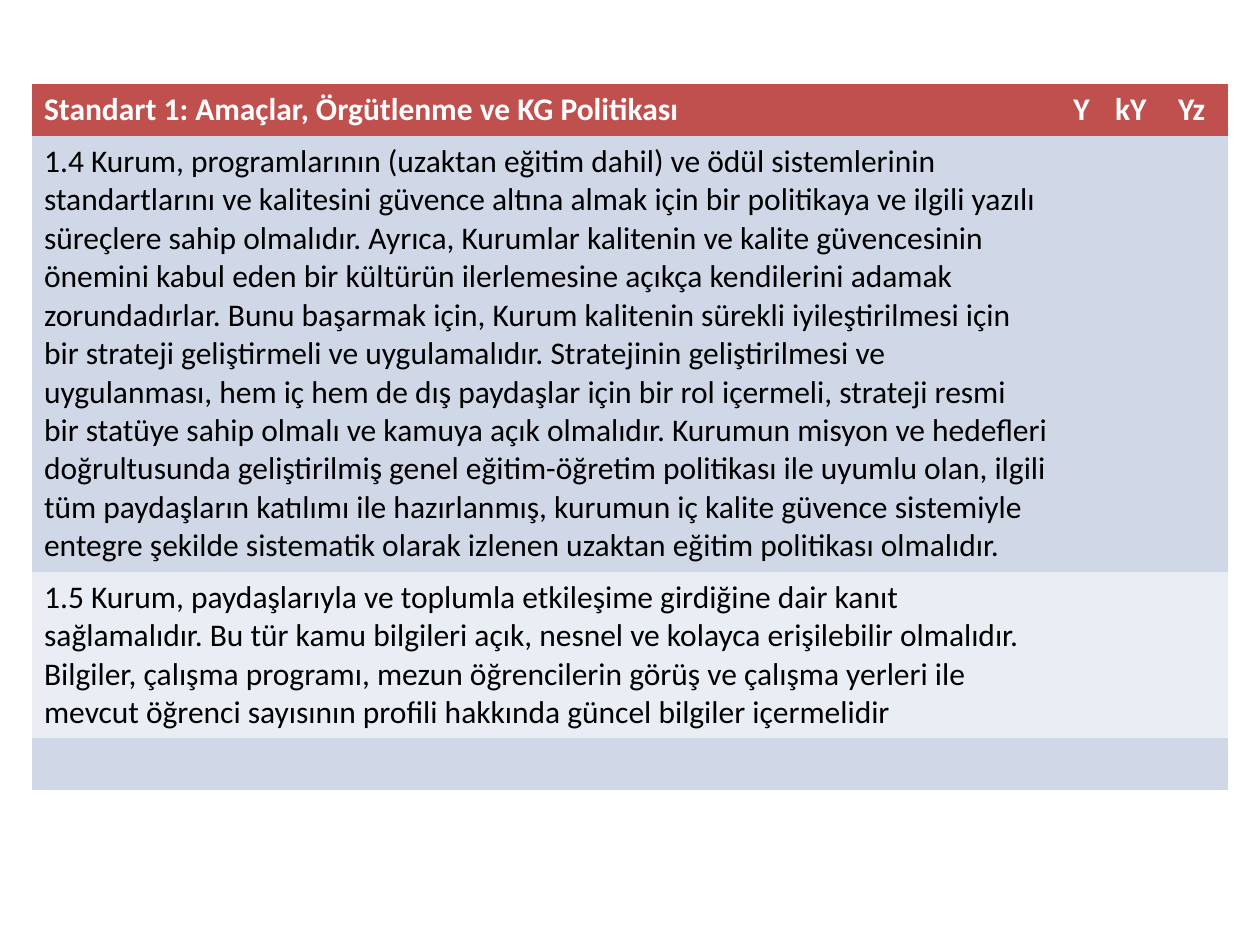
"""Build a slide with the Standard 1 assessment table."""
from pptx import Presentation
from pptx.dml.color import RGBColor
from pptx.util import Inches, Pt

RED = RGBColor(0xC0, 0x50, 0x4D)
BLUE = RGBColor(0xD0, 0xD8, 0xE8)
PALE = RGBColor(0xE9, 0xED, 0xF4)
WHITE = RGBColor(0xFF, 0xFF, 0xFF)
BLACK = RGBColor(0x00, 0x00, 0x00)
NO_STYLE = "{2D5ABB26-0587-4C30-8999-92F81FD0307C}"

COLS = [8.17, 0.33, 0.5, 0.5]
ROWS = [0.41, 3.46, 1.32, 0.41]
FILLS = [RED, BLUE, PALE, BLUE]
POLICY = [
    "1.4 Kurum, programlarının (uzaktan eğitim dahil) ve ödül sistemlerinin "
    "standartlarını ve kalitesini güvence altına almak için bir politikaya ve ilgili yazılı "
    "süreçlere sahip olmalıdır.",
    "Ayrıca, Kurumlar kalitenin ve kalite güvencesinin önemini kabul eden bir kültürün "
    "ilerlemesine açıkça kendilerini adamak zorundadırlar.",
    "Bunu başarmak için, Kurum kalitenin sürekli iyileştirilmesi için bir strateji "
    "geliştirmeli ve uygulamalıdır.",
    "Stratejinin geliştirilmesi ve uygulanması, hem iç hem de dış paydaşlar için bir rol "
    "içermeli, strateji resmi bir statüye sahip olmalı ve kamuya açık olmalıdır.",
    "Kurumun misyon ve hedefleri doğrultusunda geliştirilmiş genel eğitim-öğretim "
    "politikası ile uyumlu olan, ilgili tüm paydaşların katılımı ile hazırlanmış, kurumun "
    "iç kalite güvence sistemiyle entegre şekilde sistematik olarak izlenen uzaktan "
    "eğitim politikası olmalıdır.",
]
PUBLIC_INFO = [
    "1.5 Kurum, paydaşlarıyla ve toplumla etkileşime girdiğine dair kanıt sağlamalıdır.",
    "Bu tür kamu bilgileri açık, nesnel ve kolayca erişilebilir olmalıdır.",
    "Bilgiler, çalışma programı, mezun öğrencilerin görüş ve çalışma yerleri ile "
    "mevcut öğrenci sayısının profili hakkında güncel bilgiler içermelidir",
]
TEXTS = [
    ["Standart 1: Amaçlar, Örgütlenme ve KG Politikası", "Y", "kY", "Yz"],
    [" ".join(POLICY), "", "", ""],
    [" ".join(PUBLIC_INFO), "", "", ""],
    ["", "", "", ""],
]


def write(tf, text, color=BLACK, bold=False, size=18, font="Calibri"):
    r = tf.paragraphs[0].add_run()
    r.text = text
    r.font.name = font
    r.font.size = Pt(size)
    r.font.bold = bold
    r.font.color.rgb = color


prs = Presentation()
prs.slide_width, prs.slide_height = Inches(10), Inches(7.5)
s = prs.slides.add_slide(prs.slide_layouts[6])

frame = s.shapes.add_table(len(ROWS), len(COLS), Inches(0.25), Inches(0.67),
                           Inches(sum(COLS)), Inches(sum(ROWS)))
table = frame.table
table.horz_banding = False
table._tbl.tblPr[0].text = NO_STYLE
for column, width in zip(table.columns, COLS):
    column.width = Inches(width)

for i, (height, fill, texts) in enumerate(zip(ROWS, FILLS, TEXTS)):
    table.rows[i].height = Inches(height)
    for cell, text in zip(table.rows[i].cells, texts):
        cell.fill.solid()
        cell.fill.fore_color.rgb = fill
        if text:
            write(cell.text_frame, text, color=BLACK if i else WHITE, bold=i == 0)

prs.save("out.pptx")
